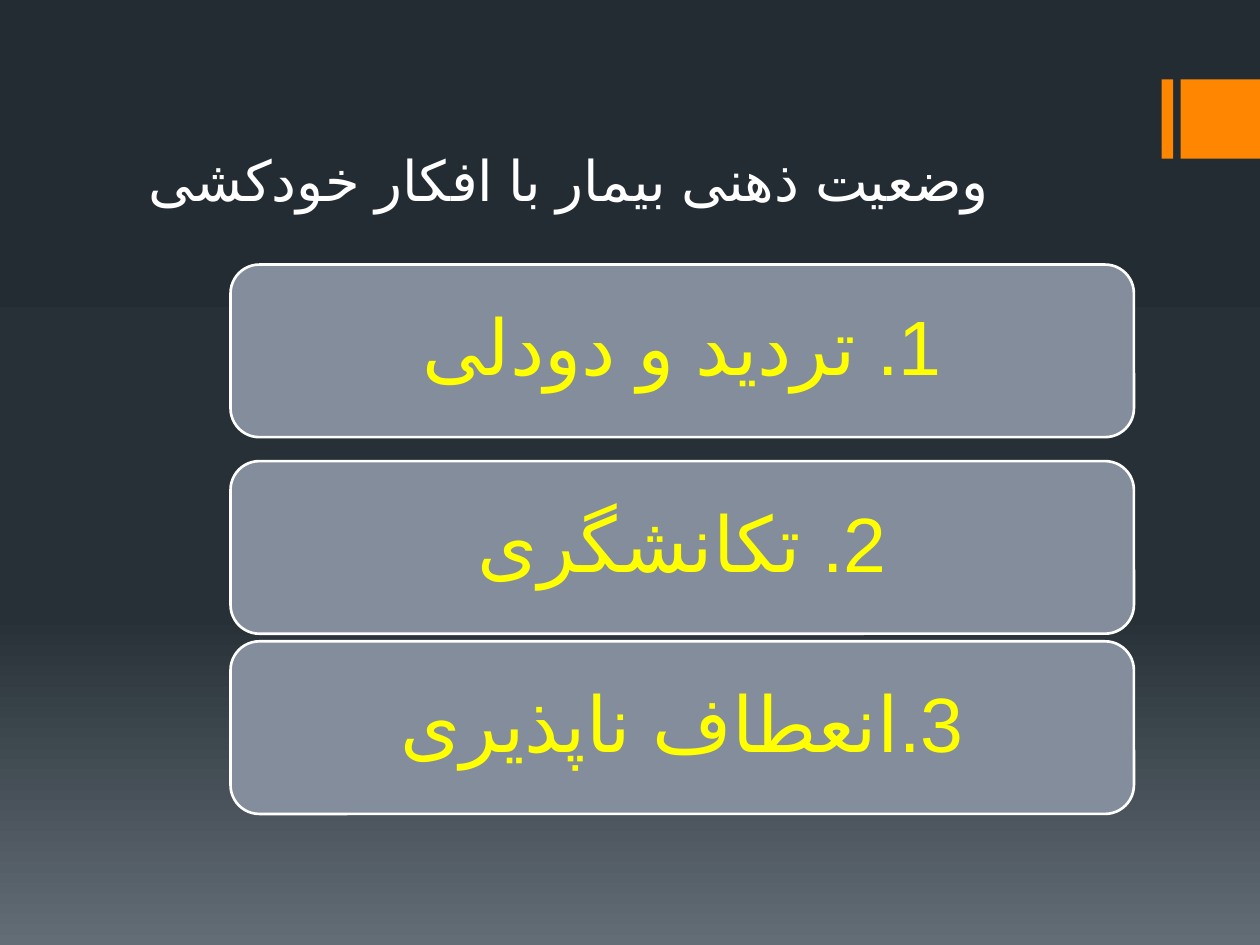
from copy import deepcopy
from lxml.etree import SubElement
from pptx import Presentation
from pptx.dml.color import RGBColor
from pptx.enum.shapes import MSO_SHAPE
from pptx.enum.text import MSO_ANCHOR, PP_ALIGN
from pptx.oxml.ns import qn
from pptx.util import Inches, Pt


def rgb(value):
    return RGBColor.from_string(value)


def write(sp, text, size, color, align, spacing, frame):
    tf = sp.text_frame
    for name, value in frame.items():
        setattr(tf, name, value)
    p = tf.paragraphs[0]
    p.alignment = align
    p.line_spacing = spacing
    p._p.get_or_add_pPr().set("rtl", "1")
    r = p.add_run()
    r.text = text
    for name, value in {"name": "Times New Roman", "size": Pt(size)}.items():
        setattr(r.font, name, value)
    r.font.color.rgb = rgb(color)
    rPr = r._r.get_or_add_rPr()
    rPr.set("lang", "fa-IR")
    SubElement(rPr, qn("a:cs")).set("typeface", "Arial")


prs = Presentation()
prs.slide_width = Inches(10)
prs.slide_height = Inches(7.5)
s = prs.slides.add_slide(prs.slide_layouts[6])

fill = s.background.fill
fill.gradient()
fill.gradient_angle = 270
first = fill.gradient_stops[0]._gs
first.addnext(deepcopy(first))
stops = [(0, "242C33"), (0.65, "273037"), (1, "636D76")]
for stop, (position, color) in zip(fill.gradient_stops, stops):
    stop.position = position
    stop.color.rgb = rgb(color)

for left, width in [(9.22, 0.09), (9.37, 0.63)]:
    sp = s.shapes.add_shape(MSO_SHAPE.RECTANGLE, Inches(left), Inches(0.63),
                            Inches(width), Inches(0.63))
    sp.shadow.inherit = False
    sp.fill.solid()
    sp.fill.fore_color.rgb = rgb("FF8600")
    sp.line.fill.background()

title = s.shapes.add_textbox(Inches(1.08), Inches(0.33), Inches(8), Inches(1.83))
write(title, "وضعیت ذهنی بیمار با افکار خودکشی", 32, "FFFFFF", PP_ALIGN.LEFT, Pt(30),
      {"word_wrap": True, "vertical_anchor": MSO_ANCHOR.BOTTOM,
       "margin_bottom": Inches(0.47)})

inset = Inches(0.25)
card_frame = {"word_wrap": True, "vertical_anchor": MSO_ANCHOR.MIDDLE,
              "margin_left": inset, "margin_right": inset,
              "margin_top": inset, "margin_bottom": inset}
cards = [(2.1, "1. تردید و دودلی"), (3.66, "2. تکانشگری"), (5.09, "3.انعطاف ناپذیری")]
for top, text in cards:
    sp = s.shapes.add_shape(MSO_SHAPE.ROUNDED_RECTANGLE, Inches(1.83), Inches(top),
                            Inches(7.17), Inches(1.37))
    sp.shadow.inherit = False
    sp.fill.solid()
    sp.fill.fore_color.rgb = rgb("838D9B")
    sp.line.color.rgb = rgb("FFFFFF")
    sp.line.width = Pt(1.5)
    write(sp, text, 44, "FFFF00", PP_ALIGN.CENTER, 0.9, card_frame)

prs.save("out.pptx")
